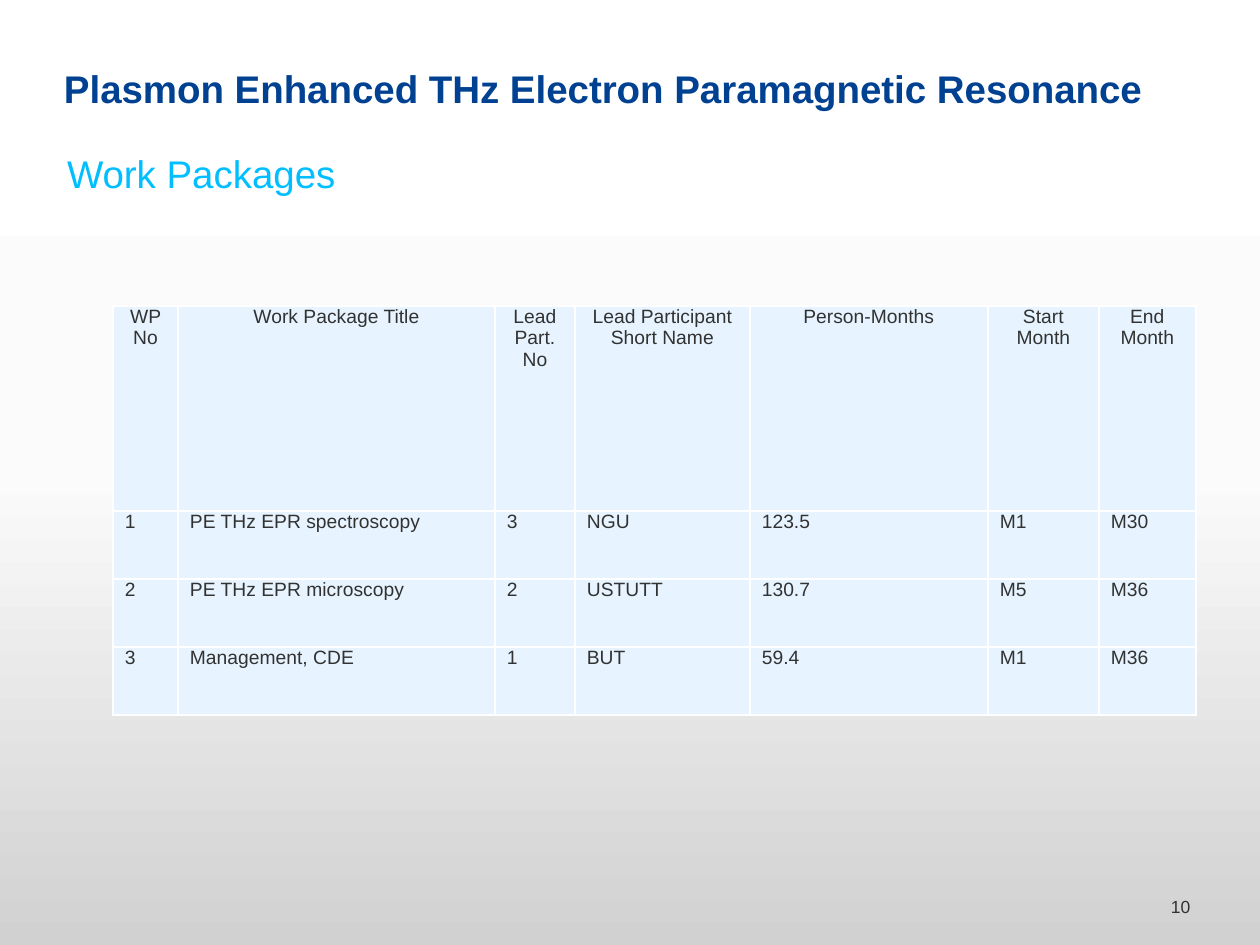
from copy import deepcopy

from lxml.etree import SubElement
from pptx import Presentation
from pptx.dml.color import RGBColor
from pptx.enum.text import MSO_ANCHOR as Anchor, MSO_AUTO_SIZE as AutoSize, PP_ALIGN as Align
from pptx.oxml.ns import qn
from pptx.util import Emu, Pt

NAVY, CYAN, INK, ICE, WHITE = "004191", "00BEFF", "323232", "E7F4FF", "FFFFFF"
COLUMN_WIDTHS = [65, 317, 80, 175, 238, 111, 97]
ROW_HEIGHTS = [205, 68, 68, 68]
WORK_PACKAGES = [
    ["WP No", "Work Package Title", "Lead Part. No", "Lead Participant Short Name",
     "Person-Months", "Start Month", "End Month"],
    ["1", "PE THz EPR spectroscopy", "3", "NGU", "123.5", "M1", "M30"],
    ["2", "PE THz EPR microscopy", "2", "USTUTT", "130.7", "M5", "M36"],
    ["3", "Management, CDE", "1", "BUT", "59.4", "M1", "M36"],
]


def px(length):
    return Emu(round(length * 914400 / 126))


def rgb(value):
    return RGBColor.from_string(value)


class Deck:
    font = "Arial"

    def __init__(self):
        self.presentation = Presentation()
        self.presentation.slide_width = px(1260)
        self.presentation.slide_height = px(945)
        self.slide = self.presentation.slides.add_slide(self.presentation.slide_layouts[1])

    def background(self, stops):
        fill = self.slide.background.fill
        fill.gradient()
        fill.gradient_angle = 270
        stop_list = self.slide.element.find(".//" + qn("a:gsLst"))
        while len(stop_list) < len(stops):
            stop_list.append(deepcopy(stop_list[0]))
        for stop, (position, color) in zip(fill.gradient_stops, stops):
            stop.position = position
            stop.color.rgb = rgb(color)

    def style(self, paragraph, size, color, bold=False, align=Align.LEFT):
        paragraph.alignment = align
        font = paragraph.font
        font.name, font.size, font.bold = self.font, Pt(size), bold
        font.color.rgb = rgb(color)

    def set_text(self, shape, box, text, size, color, bold=False, anchor=Anchor.TOP):
        shape.left, shape.top, shape.width, shape.height = map(px, box)
        frame = shape.text_frame
        frame.text = text
        frame.word_wrap = True
        frame.auto_size = AutoSize.NONE
        frame.vertical_anchor = anchor
        frame.margin_left = frame.margin_top = frame.margin_right = frame.margin_bottom = 0
        paragraph = frame.paragraphs[0]
        self.style(paragraph, size, color, bold)
        return paragraph

    def title(self, box, text):
        paragraph = self.set_text(self.slide.shapes.title, box, text, 22, NAVY, True, Anchor.BOTTOM)
        paragraph.line_spacing = 0.9

    def subtitle(self, box, text):
        paragraph = self.set_text(self.slide.placeholders[1], box, text, 22, CYAN)
        properties = paragraph._p.get_or_add_pPr()
        properties.set("marL", "0")
        properties.set("indent", "0")
        properties.insert(0, properties.makeelement(qn("a:buNone")))
        paragraph.line_spacing = 1.2
        paragraph.space_before = Pt(7.5)

    def page_number(self, box, text):
        self.set_text(self.slide.shapes.add_textbox(*map(px, box)), box, text, 10, INK)

    def border(self, cell, color):
        properties = cell._tc.get_or_add_tcPr()
        for side in "LRTB":
            line = SubElement(properties, qn(f"a:ln{side}"), w=str(Pt(1)))
            SubElement(SubElement(line, qn("a:solidFill")), qn("a:srgbClr"), val=color)

    def table(self, left, top, widths, heights, rows):
        table = self.slide.shapes.add_table(
            len(heights), len(widths), px(left), px(top), px(sum(widths)), px(sum(heights))).table
        table.first_row = table.horz_banding = False
        for column, width in zip(table.columns, widths):
            column.width = px(width)
        for row, height, texts in zip(table.rows, heights, rows):
            row.height = px(height)
            for cell, text in zip(row.cells, texts):
                self.cell(cell, text, texts is rows[0])

    def cell(self, cell, text, is_header):
        cell.text = text
        cell.margin_left = cell.margin_right = px(9)
        cell.margin_top = cell.margin_bottom = 0
        self.border(cell, WHITE)
        cell.fill.solid()
        cell.fill.fore_color.rgb = rgb(ICE)
        paragraph = cell.text_frame.paragraphs[0]
        self.style(paragraph, 11, INK, align=Align.CENTER if is_header else Align.JUSTIFY)
        if not is_header:
            paragraph._p.get_or_add_pPr().set("marL", str(px(3)))


def main():
    deck = Deck()
    deck.background([(0, WHITE), (0.5, "FBFBFB"), (1, "D1D1D1")])
    deck.subtitle((67, 141, 1131, 45), "Work Packages")
    deck.title((64, 65, 1131, 47), "Plasmon Enhanced THz Electron Paramagnetic Resonance")
    deck.page_number((1171, 896, 37, 21), "10")
    deck.table(113, 306, COLUMN_WIDTHS, ROW_HEIGHTS, WORK_PACKAGES)
    deck.presentation.save("out.pptx")


if __name__ == "__main__":
    main()
